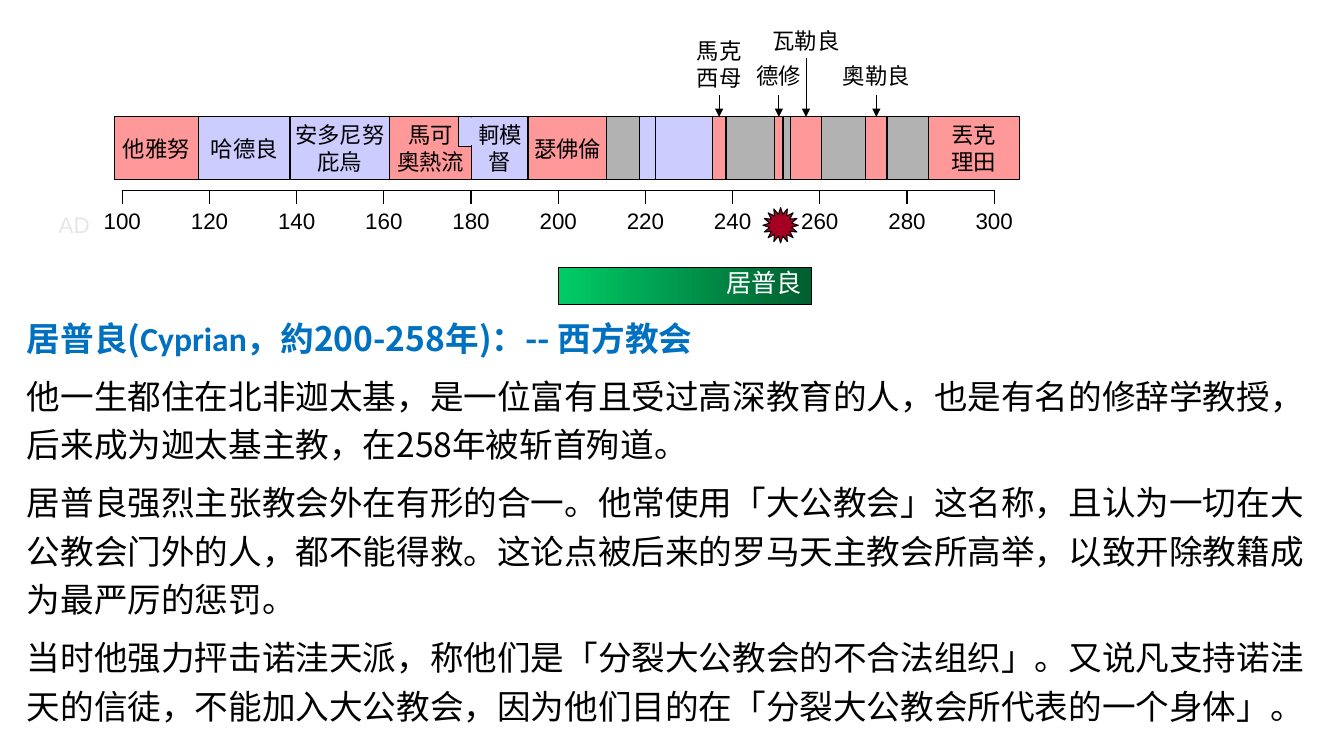
"""Build the 居普良 slide: a labelled bar over a year scale, with a heading and three paragraphs."""
from dataclasses import dataclass
from typing import Optional

from lxml.etree import SubElement
from pptx import Presentation
from pptx.dml.color import RGBColor
from pptx.enum.shapes import MSO_CONNECTOR, MSO_SHAPE
from pptx.enum.text import MSO_ANCHOR, MSO_AUTO_SIZE, PP_ALIGN
from pptx.oxml import parse_xml
from pptx.oxml.ns import nsdecls, qn
from pptx.util import Pt

COLORS = {
    "black": "000000", "white": "FFFFFF", "pink": "FF9999", "lavender": "CCCCFF",
    "grey": "B2B2B2", "blue": "0070C0", "pale_grey": "E6E6E6", "dark_red": "A50021",
    "green": "00CC66", "dark_green": "005E2F",
}
CJK_FONT = "Noto Sans CJK SC"
BAR_LEFT, BAR_TOP, BAR_HEIGHT = 81.5, 83.5, 44.7
SCALE_LEFT, SCALE_STEP = 56.2, 62.28
YEARS = range(100, 301, 20)


@dataclass
class Callout:
    """A label above the bar."""
    lines: tuple[str, ...]
    top: float
    width: float
    height: float


@dataclass
class Segment:
    """One segment of the bar, with the label that may point at it."""
    width: float
    color: str
    lines: tuple[str, ...] = ()
    callout: Optional[Callout] = None


SEGMENTS = [
    Segment(60.5, "pink", ("他雅努",)),
    Segment(65.2, "lavender", ("哈德良",)),
    Segment(71, "lavender", ("安多尼努", "庇烏")),
    Segment(58.8, "pink", ("馬可", "奧熱流")),
    Segment(39.8, "lavender", ("軻模", "督")),
    Segment(0.7, "grey"),
    Segment(55.9, "pink", ("瑟佛倫",)),
    Segment(23.4, "grey"),
    Segment(11.4, "lavender"),
    Segment(40.6, "lavender"),
    Segment(9.8, "pink", callout=Callout(("馬克", "西母"), 23, 49.7, 45)),
    Segment(34.8, "grey"),
    Segment(5.9, "pink", callout=Callout(("德修",), 41, 50.4, 26.7)),
    Segment(5.4, "grey"),
    Segment(22.1, "pink", callout=Callout(("瓦勒良",), 15.8, 70.6, 26)),
    Segment(31.6, "grey"),
    Segment(15.2, "pink", callout=Callout(("奧勒良",), 41, 62.6, 26.7)),
    Segment(29.4, "grey"),
    Segment(65, "pink", ("丟克", "理田")),
]

HEADING = [("居普良", "Calibri"), ("(", CJK_FONT), ("Cyprian", "Calibri"),
           ("，約200-258年)：-- 西方教会", CJK_FONT)]
PARAGRAPHS = [
    "他一生都住在北非迦太基，是一位富有且受过高深教育的人，也是有名的修辞学教授，后来成为迦太基主教，在258年被斩首殉道。",
    "居普良强烈主张教会外在有形的合一。他常使用「大公教会」这名称，且认为一切在大公教会门外的人，都不能得救。这论点被后来的罗马天主教会所高举，以致开除教籍成为最严厉的惩罚。",
    "当时他强力抨击诺洼天派，称他们是「分裂大公教会的不合法组织」。又说凡支持诺洼天的信徒，不能加入大公教会，因为他们目的在「分裂大公教会所代表的一个身体」。",
]


def rgb(name: str) -> RGBColor:
    return RGBColor.from_string(COLORS[name])


def style_font(para, size: float, color: str, name: Optional[str] = None, bold: bool = False) -> None:
    para.font.size, para.font.bold = Pt(size), bold
    para.font.color.rgb = rgb(color)
    if name:
        para.font.name = name


def write_lines(frame, lines, size: float = 16, color: str = "black", name: str = "Calibri",
                align=PP_ALIGN.CENTER) -> None:
    for index, line in enumerate(lines):
        para = frame.add_paragraph() if index else frame.paragraphs[0]
        para.text, para.alignment = line, align
        style_font(para, size, color, name)


def add_block(page, left: float, top: float, width: float, height: float, color: str,
              outlined: bool = True, kind=MSO_SHAPE.RECTANGLE):
    box = page.shapes.add_shape(kind, Pt(left), Pt(top), Pt(width), Pt(height))
    box.shadow.inherit = False
    box.fill.solid()
    box.fill.fore_color.rgb = rgb(color)
    if outlined:
        box.line.color.rgb, box.line.width = rgb("black"), Pt(0.75)
    else:
        box.line.fill.background()
    box.text_frame.word_wrap = False
    return box


def add_label(page, lines, left: float, top: float, width: float, height: float,
              color: str = "black", name: str = "Calibri"):
    box = page.shapes.add_textbox(Pt(left), Pt(top), Pt(width), Pt(height))
    box.text_frame.word_wrap = True
    write_lines(box.text_frame, lines, color=color, name=name)
    return box


def add_arrow(page, label, target) -> None:
    arrow = page.shapes.add_connector(MSO_CONNECTOR.STRAIGHT, 0, 0, 0, 0)
    arrow.begin_connect(label, 2)
    arrow.end_connect(target, 0)
    arrow.line.color.rgb, arrow.line.width = rgb("black"), Pt(0.75)
    SubElement(arrow.line._get_or_add_ln(), qn("a:tailEnd"), type="triangle")
    SubElement(arrow._element.spPr, qn("a:effectLst"))


def set_borders(cell, color: str) -> None:
    properties = cell._tc.get_or_add_tcPr()
    for index, side in enumerate(("lnL", "lnR", "lnT", "lnB")):
        properties.insert(index, parse_xml(
            f'<a:{side} {nsdecls("a")} w="12700"><a:solidFill>'
            f'<a:srgbClr val="{COLORS[color]}"/></a:solidFill></a:{side}>'))


def add_scale_row(page, columns: int, left: float, top: float, height: float, border: str):
    frame = page.shapes.add_table(1, columns, Pt(left), Pt(top), Pt(SCALE_STEP * columns), Pt(height))
    table = frame.table
    table.first_row = table.horz_banding = False
    for column in table.columns:
        column.width = Pt(SCALE_STEP)
    for cell in table.iter_cells():
        cell.fill.background()
        set_borders(cell, border)
    return table


def add_scale(page) -> None:
    add_scale_row(page, len(YEARS) - 1, SCALE_LEFT + SCALE_STEP / 2, 136, 28.8, "black")
    labels = add_scale_row(page, len(YEARS), SCALE_LEFT, 146.2, 26.6, "white")
    for cell, year in zip(labels.iter_cells(), YEARS):
        cell.fill.solid()
        cell.fill.fore_color.rgb = rgb("white")
        write_lines(cell.text_frame, [str(year)], name="Arial")
    add_label(page, ["AD"], 30, 147.3, 46, 26.6, "pale_grey", "Arial")


def add_bar(page) -> None:
    left = BAR_LEFT
    for segment in SEGMENTS:
        box = add_block(page, left, BAR_TOP, segment.width, BAR_HEIGHT, segment.color)
        if segment.lines:
            box.text_frame.vertical_anchor = MSO_ANCHOR.MIDDLE
            write_lines(box.text_frame, segment.lines)
        if segment.callout:
            note = segment.callout
            label = add_label(page, note.lines, left + (segment.width - note.width) / 2,
                              note.top, note.width, note.height)
            add_arrow(page, label, box)
        left += segment.width
    add_block(page, 327.6, BAR_TOP, 9.4, 20.9, "lavender")
    add_block(page, 335.5, BAR_TOP + 0.4, 7.2, 19.6, "lavender", outlined=False)


def add_gradient_bar_and_star(page) -> None:
    box = add_block(page, 399, 190.8, 180.7, 26.6, "white")
    box.fill.gradient()
    box.fill.gradient_angle = 0
    for stop, color, position in zip(box.fill.gradient_stops, ("green", "dark_green"), (0, 1)):
        stop.color.rgb, stop.position = rgb(color), position
    box.text_frame.vertical_anchor = MSO_ANCHOR.TOP
    write_lines(box.text_frame, ["居普良"], 18, "white", CJK_FONT, PP_ALIGN.RIGHT)
    box.text_frame.paragraphs[0].line_spacing = 0.85
    star = add_block(page, 545, 148.3, 25.2, 25.2, "dark_red", kind=MSO_SHAPE.STAR_16_POINT)
    star.adjustments[0] = 0.314


def place_text(holder, top: float, height: float):
    holder.left, holder.top, holder.width, holder.height = Pt(12), Pt(top), Pt(933), Pt(height)
    frame = holder.text_frame
    frame.word_wrap, frame.auto_size = True, MSO_AUTO_SIZE.NONE
    frame.vertical_anchor = MSO_ANCHOR.TOP
    return frame


def format_prose(para, color: str, bold: bool, name: Optional[str] = None) -> None:
    para.alignment, para.line_spacing = PP_ALIGN.LEFT, 1.2
    para.space_before, para.space_after = Pt(0), Pt(7)
    style_font(para, 24, color, name, bold)


def add_prose(page) -> None:
    heading = place_text(page.shapes.title, 217.4, 41.6).paragraphs[0]
    for text, name in HEADING:
        span = heading.add_run()
        span.text, span.font.name = text, name
    format_prose(heading, "blue", True)
    frame = place_text(page.placeholders[1], 259, 264.5)
    for index, text in enumerate(PARAGRAPHS):
        para = frame.add_paragraph() if index else frame.paragraphs[0]
        para.text = text
        format_prose(para, "black", False, CJK_FONT)
        properties = para._p.get_or_add_pPr()
        properties.set("marL", "0")
        properties.set("indent", "0")
        properties.find(qn("a:defRPr")).addprevious(parse_xml(f'<a:buNone {nsdecls("a")}/>'))


def main() -> None:
    deck = Presentation()
    deck.slide_width, deck.slide_height = Pt(960), Pt(540)
    page = deck.slides.add_slide(deck.slide_layouts[1])
    add_prose(page)
    add_scale(page)
    add_bar(page)
    add_gradient_bar_and_star(page)
    deck.save("out.pptx")


if __name__ == "__main__":
    main()
